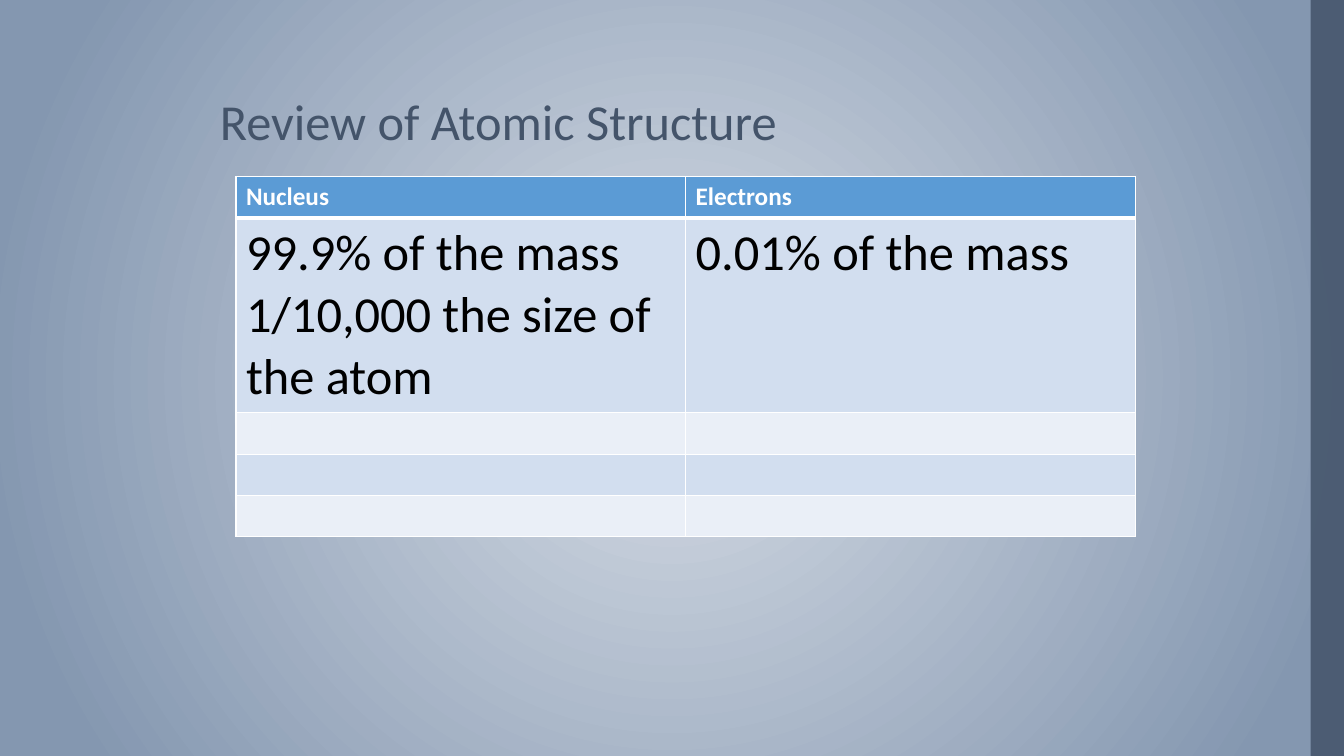
from lxml import etree
from pptx import Presentation
from pptx.dml.color import RGBColor
from pptx.enum.shapes import MSO_SHAPE as Shape
from pptx.enum.text import MSO_ANCHOR as Anchor, PP_ALIGN as Align
from pptx.oxml.ns import qn
from pptx.util import Inches, Pt

FONT = "Calibri"
SLATE = "44546A"
WHITE = "FFFFFF"
HEADER_FILL = "5B9BD5"
BAND_FILLS = ("D2DEEF", "EAEFF7")
ROW_HEIGHTS = (0.41, 1.93, 0.41, 0.41, 0.41)
CELL_TEXTS = (
    ("Nucleus", "Electrons"),
    ("99.9% of the mass\n1/10,000 the size of the atom", "0.01% of the mass"),
    ("", ""),
    ("", ""),
    ("", ""),
)


def color(hex_string):
    return RGBColor.from_string(hex_string)


def format_paragraph(paragraph, size, hex_string, bold=False):
    font = paragraph.font
    font.name, font.size, font.bold = FONT, Pt(size), bold
    font.color.rgb = color(hex_string)
    for run in paragraph.runs:
        run.font.name, run.font.size, run.font.bold = FONT, Pt(size), bold
        run.font.color.rgb = color(hex_string)


def paint_background(slide):
    """Fill the slide with a gradient that spreads from its centre."""
    fill = slide.background.fill
    fill.gradient()
    stops = ((0, "D6DCE5"), (0.9, "8497B0"))
    for stop, (position, hex_string) in zip(fill.gradient_stops, stops):
        stop.position = position
        stop.color.rgb = color(hex_string)
    gradient = next(slide.element.iter(qn("a:gradFill")))
    gradient.remove(gradient.find(qn("a:lin")))
    circle = etree.SubElement(gradient, qn("a:path"), path="circle")
    sides = dict.fromkeys("ltrb", "50000")
    etree.SubElement(circle, qn("a:fillToRect"), **sides)


def add_side_bar(slide, left, top, width, height):
    bar = slide.shapes.add_shape(
        Shape.RECTANGLE, Inches(left), Inches(top), Inches(width), Inches(height))
    bar.shadow.inherit = False
    bar.line.fill.background()
    bar.fill.solid()
    bar.fill.fore_color.rgb = color(SLATE)
    solid_color = next(bar.element.spPr.iter(qn("a:srgbClr")))
    etree.SubElement(solid_color, qn("a:alpha"), val="87000")


def place_title(slide, left, top, width, height):
    title = slide.shapes.title
    title.left, title.top = Inches(left), Inches(top)
    title.width, title.height = Inches(width), Inches(height)
    frame = title.text_frame
    frame.text = "Review of Atomic Structure"
    frame.vertical_anchor = Anchor.BOTTOM
    paragraph = frame.paragraphs[0]
    paragraph.alignment = Align.LEFT
    paragraph.line_spacing = 0.9
    format_paragraph(paragraph, 36, SLATE)


def add_borders(cell, top, bottom):
    """Draw white borders; the widths of top and bottom are in points."""
    properties = cell._tc.get_or_add_tcPr()
    for side, width in (("L", 1), ("R", 1), ("T", top), ("B", bottom)):
        line = etree.SubElement(properties, qn(f"a:ln{side}"), w=str(Pt(width)))
        fill = etree.SubElement(line, qn("a:solidFill"))
        etree.SubElement(fill, qn("a:srgbClr"), val=WHITE)


def format_cell(cell, row, text):
    is_header = row == 0
    add_borders(cell, top=3 if row == 1 else 1, bottom=3 if is_header else 1)
    cell.fill.solid()
    cell.fill.fore_color.rgb = color(
        HEADER_FILL if is_header else BAND_FILLS[(row - 1) % 2])
    cell.text_frame.text = text
    for paragraph in cell.text_frame.paragraphs:
        format_paragraph(paragraph, 36 if row == 1 else 18,
                         WHITE if is_header else "000000", is_header)


def add_structure_table(slide, left, top, width):
    columns = len(CELL_TEXTS[0])
    table = slide.shapes.add_table(
        len(CELL_TEXTS), columns, Inches(left), Inches(top),
        Inches(width), Inches(sum(ROW_HEIGHTS))).table
    for column in table.columns:
        column.width = Inches(width / columns)
    for row, (height, texts) in enumerate(zip(ROW_HEIGHTS, CELL_TEXTS)):
        table.rows[row].height = Inches(height)
        for column, text in enumerate(texts):
            format_cell(table.cell(row, column), row, text)


def main():
    presentation = Presentation()
    presentation.slide_width = Inches(13.33)
    presentation.slide_height = Inches(7.5)
    slide = presentation.slides.add_slide(presentation.slide_layouts[5])
    paint_background(slide)
    add_side_bar(slide, 13, 0, 0.33, 7.5)
    place_title(slide, 2.08, 0.19, 10.36, 1.36)
    add_structure_table(slide, 2.34, 1.75, 8.92)
    presentation.save("out.pptx")


if __name__ == "__main__":
    main()
